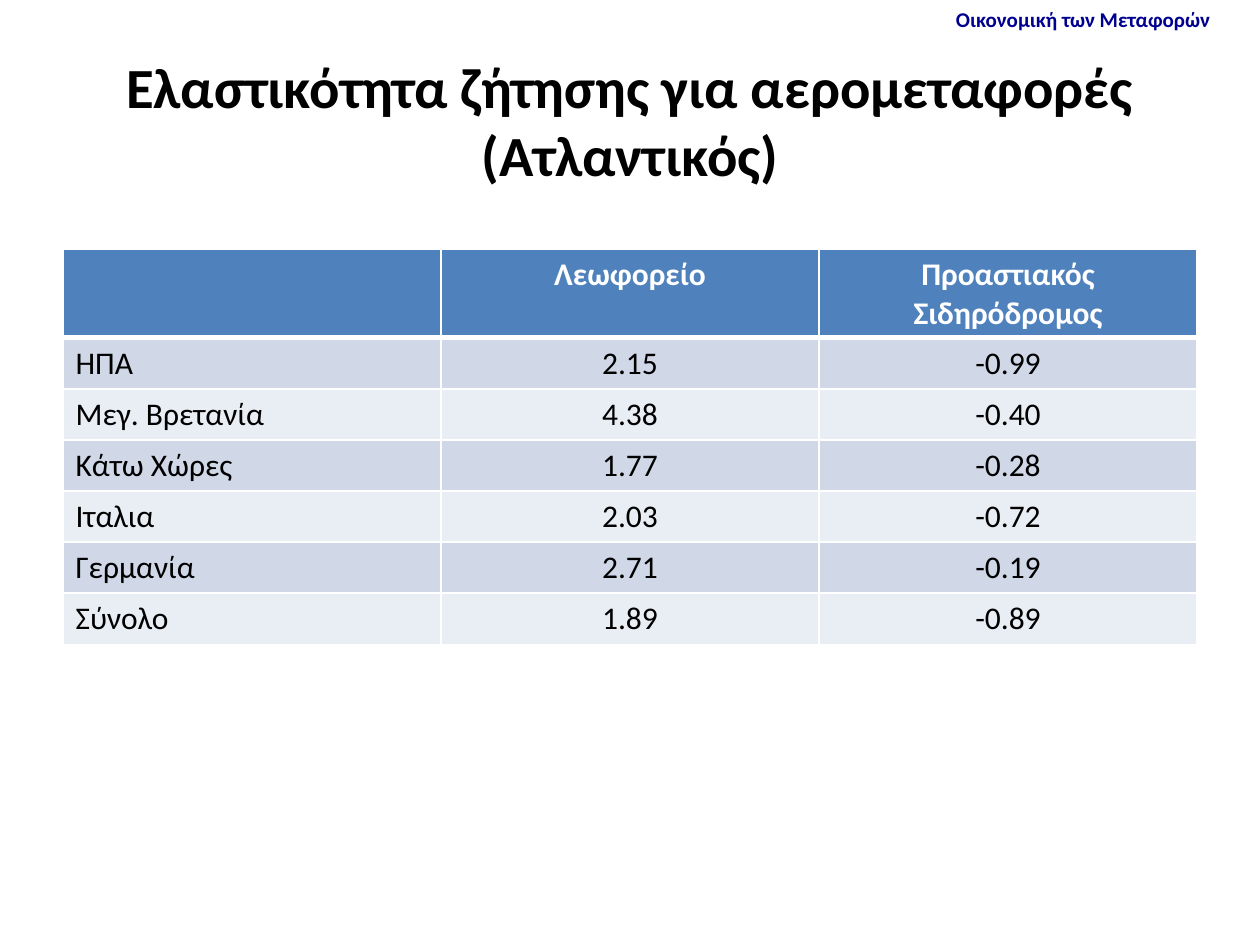
from dataclasses import dataclass

from pptx import Presentation
from pptx import util as u
from pptx.dml.color import RGBColor
from pptx.enum import text
from pptx.oxml import parse_xml
from pptx.oxml.ns import nsdecls


@dataclass(frozen=True)
class Theme:
    font: str = "Calibri"
    ink: str = "000000"
    white: str = "FFFFFF"
    navy: str = "000090"
    header_fill: str = "4F81BD"
    bands: tuple = ("D0D8E8", "E9EDF4")
    course_size: float = 12
    title_size: float = 32.4
    table_size: float = 18


class SlideBuilder:
    def __init__(self, slide, theme):
        self.s = slide
        self.theme = theme

    def style(self, tf, size, color, bold=False, align=text.PP_ALIGN.LEFT):
        for p in tf.paragraphs:
            p.alignment = align
            for r in p.runs:
                r.font.name = self.theme.font
                r.font.size = u.Pt(size)
                r.font.bold = bold
                r.font.color.rgb = RGBColor.from_string(color)

    def text_box(self, words, box, size, color, wrap=True,
                 align=text.PP_ALIGN.LEFT, anchor=text.MSO_ANCHOR.TOP):
        tf = self.s.shapes.add_textbox(*map(u.Cm, box)).text_frame
        tf.text = words
        tf.word_wrap = wrap
        tf.auto_size = (text.MSO_AUTO_SIZE.NONE if wrap
                        else text.MSO_AUTO_SIZE.SHAPE_TO_FIT_TEXT)
        tf.vertical_anchor = anchor
        self.style(tf, size, color, True, align)

    def borders(self, cell, widths):
        tc_pr = cell._tc.get_or_add_tcPr()
        for i, (side, width) in enumerate(widths.items()):
            tc_pr.insert(i, parse_xml(
                f'<a:{side} {nsdecls("a")} w="{u.Pt(width)}"><a:solidFill>'
                f'<a:srgbClr val="{self.theme.white}"/></a:solidFill></a:{side}>'))

    def table(self, rows, left, top, col_width, header_height, row_height):
        t = self.theme
        heights = [header_height] + [row_height] * (len(rows) - 1)
        n_cols = len(rows[0])
        table = self.s.shapes.add_table(
            len(rows), n_cols, u.Cm(left), u.Cm(top),
            u.Cm(col_width * n_cols), u.Cm(sum(heights))).table
        for col in table.columns:
            col.width = u.Cm(col_width)
        for i, values in enumerate(rows):
            table.rows[i].height = u.Cm(heights[i])
            header = i == 0
            fill = t.header_fill if header else t.bands[(i - 1) % 2]
            for j, value in enumerate(values):
                cell = table.cell(i, j)
                cell.text = value
                cell.fill.solid()
                cell.fill.fore_color.rgb = RGBColor.from_string(fill)
                self.style(cell.text_frame, t.table_size,
                           t.white if header else t.ink, header,
                           text.PP_ALIGN.CENTER if j else text.PP_ALIGN.LEFT)
                # A thicker rule separates the header from the body
                self.borders(cell, {"lnL": 1, "lnR": 1,
                                    "lnT": 3 if i == 1 else 1,
                                    "lnB": 3 if header else 1})


ROWS = [
    ("", "Λεωφορείο", "Προαστιακός Σιδηρόδρομος"),
    ("ΗΠΑ", "2.15", "-0.99"),
    ("Μεγ. Βρετανία", "4.38", "-0.40"),
    ("Κάτω Χώρες", "1.77", "-0.28"),
    ("Ιταλια", "2.03", "-0.72"),
    ("Γερμανία", "2.71", "-0.19"),
    ("Σύνολο", "1.89", "-0.89"),
]


def main():
    prs = Presentation()
    prs.slide_width, prs.slide_height = u.Cm(25.4), u.Cm(19.05)
    theme = Theme()
    builder = SlideBuilder(prs.slides.add_slide(prs.slide_layouts[6]), theme)

    # Course name
    builder.text_box("Οικονομική των Μεταφορών", (19.02, 0, 5.72, 0.77),
                     theme.course_size, theme.navy, wrap=False)

    # Title
    builder.text_box("Ελαστικότητα ζήτησης για αερομεταφορές (Ατλαντικός)",
                     (1.27, 1.42, 22.86, 1.98), theme.title_size, theme.ink,
                     align=text.PP_ALIGN.CENTER, anchor=text.MSO_ANCHOR.MIDDLE)

    # Elasticity table
    builder.table(ROWS, left=1.27, top=5.03, col_width=7.62,
                  header_height=1.77, row_height=1.03)

    prs.save("out.pptx")


if __name__ == "__main__":
    main()
